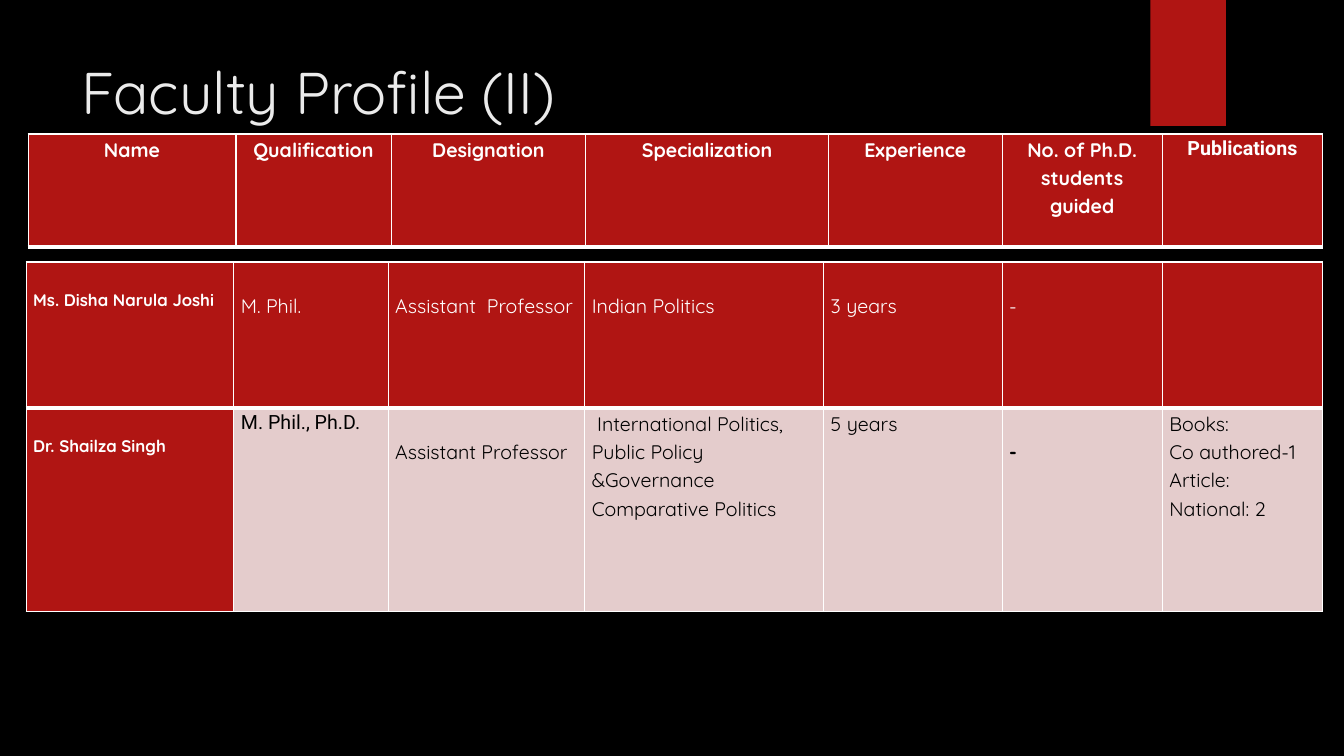
from dataclasses import dataclass

from lxml.etree import SubElement
from pptx import Presentation
from pptx.dml.color import RGBColor
from pptx.enum.shapes import MSO_SHAPE
from pptx.enum.text import PP_ALIGN
from pptx.oxml.ns import qn
from pptx.slide import Slide
from pptx.table import _Cell
from pptx.text.text import TextFrame
from pptx.util import Inches, Pt

COLORS = {
    "background": "000000",
    "red": "B01513",
    "pink": "E4CCCC",
    "white": "FFFFFF",
    "black": "000000",
    "title": "EBEBEB",
}


@dataclass(frozen=True)
class Entry:
    lines: tuple[str, ...] = ()
    drop: float = 0
    size: float = 14
    font: str = "Quicksand"
    color: str = "white"
    bold: bool = False
    fill: str = "red"
    align: PP_ALIGN = PP_ALIGN.LEFT


@dataclass(frozen=True)
class Grid:
    left: float
    top: float
    columns: tuple[float, ...]
    heights: tuple[float, ...]
    rows: tuple[tuple[Entry, ...], ...]
    border_widths: tuple[float, ...]


def heading(text: str, font: str = "Quicksand") -> Entry:
    return Entry((text,), font=font, bold=True, align=PP_ALIGN.CENTER)


def person(name: str) -> Entry:
    return Entry((name,), drop=0.24, size=12, bold=True)


def red_entry(text: str) -> Entry:
    return Entry((text,), drop=0.28)


def pink_entry(*lines: str, drop: float = 0, font: str = "Quicksand", bold: bool = False) -> Entry:
    return Entry(lines, drop=drop, font=font, bold=bold, color="black", fill="pink")


HEADER = Grid(
    0.28, 1.33, (2.06, 1.54, 1.93, 2.41, 1.72, 1.59, 1.59), (1.12,),
    ((
        heading("Name"),
        heading("Qualification"),
        heading("Designation"),
        heading("Specialization"),
        heading("Experience"),
        heading("No. of Ph.D. students guided"),
        heading("Publications", font="Roboto"),
    ),),
    (1, 3),
)

FACULTY = Grid(
    0.26, 2.6, (2.06, 1.53, 1.95, 2.37, 1.77, 1.59, 1.59), (1.45, 2.02),
    (
        (
            person("Ms. Disha Narula Joshi"),
            red_entry("M. Phil."),
            red_entry("Assistant  Professor"),
            red_entry("Indian Politics"),
            red_entry("3 years"),
            red_entry("-"),
            Entry(),
        ),
        (
            person("Dr. Shailza Singh"),
            pink_entry("M. Phil., Ph.D.", font="Roboto"),
            pink_entry("Assistant Professor", drop=0.28),
            pink_entry(" International Politics, Public Policy &Governance", "Comparative Politics"),
            pink_entry("5 years"),
            pink_entry("-", drop=0.28, bold=True),
            pink_entry("Books:", "Co authored-1", "Article:", "National: 2"),
        ),
    ),
    (1, 3, 1),
)


def rgb(name: str) -> RGBColor:
    return RGBColor.from_string(COLORS[name])


def write_text(
    frame: TextFrame,
    *lines: str,
    size: float,
    color: str,
    font: str = "Quicksand",
    bold: bool = False,
    align: PP_ALIGN = PP_ALIGN.LEFT,
    line_spacing: float = 1.0,
) -> None:
    for index, line in enumerate(lines):
        paragraph = frame.add_paragraph() if index else frame.paragraphs[0]
        paragraph.alignment = align
        paragraph.line_spacing = line_spacing
        run = paragraph.add_run()
        run.text = line
        run.font.name = font
        run.font.size = Pt(size)
        run.font.bold = bold
        run.font.color.rgb = rgb(color)


def set_borders(cell: _Cell, top: float, bottom: float) -> None:
    properties = cell._tc.get_or_add_tcPr()
    for tag, width in (("a:lnL", 1), ("a:lnR", 1), ("a:lnT", top), ("a:lnB", bottom)):
        line = SubElement(properties, qn(tag), w=str(Pt(width)))
        fill = SubElement(line, qn("a:solidFill"))
        SubElement(fill, qn("a:srgbClr"), val=COLORS["white"])


def draw_cell(cell: _Cell, entry: Entry, top_border: float, bottom_border: float) -> None:
    set_borders(cell, top_border, bottom_border)
    cell.fill.solid()
    cell.fill.fore_color.rgb = rgb(entry.fill)
    cell.margin_left = cell.margin_right = Inches(0.07)
    cell.margin_top = Inches(entry.drop)
    cell.margin_bottom = 0
    write_text(
        cell.text_frame, *entry.lines, size=entry.size, color=entry.color,
        font=entry.font, bold=entry.bold, align=entry.align, line_spacing=1.15,
    )


def draw_grid(slide: Slide, grid: Grid) -> None:
    table = slide.shapes.add_table(
        len(grid.heights), len(grid.columns), Inches(grid.left), Inches(grid.top),
        Inches(sum(grid.columns)), Inches(sum(grid.heights)),
    ).table
    table.first_row = False
    table.horz_banding = False
    for column, width in zip(table.columns, grid.columns):
        column.width = Inches(width)
    for row_index, entries in enumerate(grid.rows):
        table.rows[row_index].height = Inches(grid.heights[row_index])
        top_border, bottom_border = grid.border_widths[row_index:row_index + 2]
        for column_index, entry in enumerate(entries):
            draw_cell(table.cell(row_index, column_index), entry, top_border, bottom_border)


def main() -> None:
    presentation = Presentation()
    presentation.slide_width = Inches(13.33)
    presentation.slide_height = Inches(7.5)
    slide = presentation.slides.add_slide(presentation.slide_layouts[6])
    slide.background.fill.solid()
    slide.background.fill.fore_color.rgb = rgb("background")

    ribbon = slide.shapes.add_shape(
        MSO_SHAPE.RECTANGLE, Inches(11.41), 0, Inches(0.75), Inches(1.25)
    )
    ribbon.shadow.inherit = False
    ribbon.fill.solid()
    ribbon.fill.fore_color.rgb = rgb("red")
    ribbon.line.fill.background()

    title = slide.shapes.add_textbox(Inches(0.71), Inches(0.5), Inches(10.29), Inches(0.83))
    title.text_frame.word_wrap = True
    write_text(title.text_frame, "Faculty Profile (II)", size=42, color="title")

    for grid in (FACULTY, HEADER):
        draw_grid(slide, grid)
    presentation.save("out.pptx")


if __name__ == "__main__":
    main()
